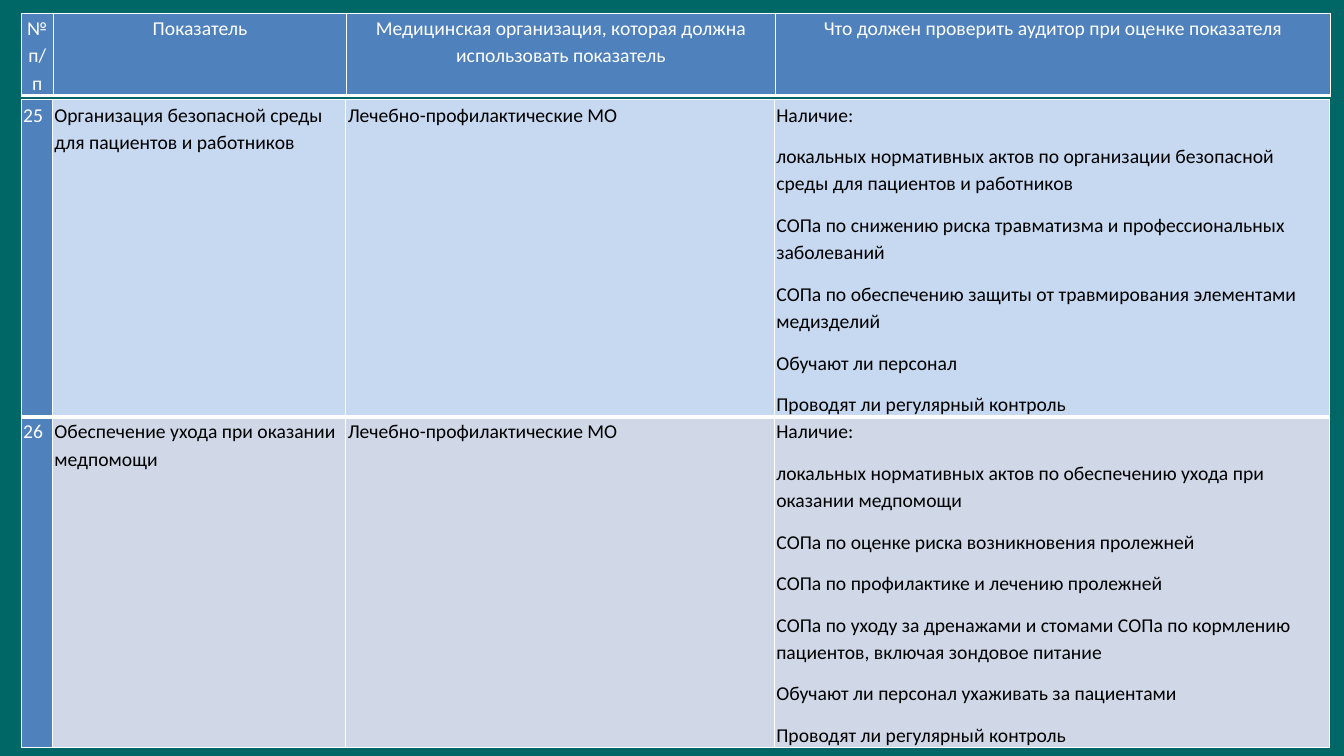
from dataclasses import dataclass

import pptx
import pptx.dml.color
import pptx.enum.text
import pptx.oxml
import pptx.oxml.ns
import pptx.util

PX = 9144  # EMU in one px, 100 px to the inch
WHITE, BLACK = "FFFFFF", "000000"
TEAL, BLUE, LIGHT_BLUE, PALE_BLUE = "006666", "4F81BD", "C6D9F1", "D0D8E8"
LEFT = pptx.enum.text.PP_ALIGN.LEFT
CENTER = pptx.enum.text.PP_ALIGN.CENTER


@dataclass
class Row:
    height: int
    cells: list[list[str]]  # paragraphs of each cell
    fill: str
    text_color: str = BLACK
    align: pptx.enum.text.PP_ALIGN = LEFT
    bottom_pt: int = 1


@dataclass
class Grid:
    top: int
    col_widths: list[int]
    side_margin: int
    rows: list[Row]


HEADER = Grid(13, [32, 291, 425, 551], 3, [
    Row(81, [
        ["№ п/п"],
        ["Показатель"],
        ["Медицинская организация, которая должна использовать показатель"],
        ["Что должен проверить аудитор при оценке показателя"],
    ], BLUE, WHITE, CENTER, 3),
])

INDICATORS = Grid(99, [31, 291, 425, 551], 2, [
    Row(312, [
        ["25"],
        ["Организация безопасной среды для пациентов и работников"],
        ["Лечебно-профилактические МО"],
        [
            "Наличие:",
            "локальных нормативных актов по организации безопасной среды для пациентов и работников",
            "СОПа по снижению риска травматизма и профессиональных заболеваний",
            "СОПа по обеспечению защиты от травмирования элементами медизделий",
            "Обучают ли персонал",
            "Проводят ли регулярный контроль",
        ],
    ], LIGHT_BLUE, bottom_pt=3),
    Row(324, [
        ["26"],
        ["Обеспечение ухода при оказании медпомощи"],
        ["Лечебно-профилактические МО"],
        [
            "Наличие:",
            "локальных нормативных актов по обеспечению ухода при оказании медпомощи",
            "СОПа по оценке риска возникновения пролежней",
            "СОПа по профилактике и лечению пролежней",
            "СОПа по уходу за дренажами и стомами СОПа по кормлению пациентов, включая зондовое питание",
            "Обучают ли персонал ухаживать за пациентами",
            "Проводят ли регулярный контроль",
        ],
    ], PALE_BLUE),
])


def px(n: int) -> pptx.util.Emu:
    return pptx.util.Emu(n * PX)


def paint(fill, color: str) -> None:
    fill.solid()
    fill.fore_color.rgb = pptx.dml.color.RGBColor.from_string(color)


def write(tf, paragraphs: list[str], *, color: str, align=LEFT,
          size: int = 14, font: str = "Calibri") -> None:
    for i, text in enumerate(paragraphs):
        p = tf.paragraphs[0] if i == 0 else tf.add_paragraph()
        p.alignment = align
        p.line_spacing = 1.15
        p.space_after = pptx.util.Pt(10)
        r = p.add_run()
        r.text = text
        r.font.size = pptx.util.Pt(size)
        r.font.name = font
        paint(r.font.fill, color)


def add_borders(cell, bottom_pt: int) -> None:
    tc_pr = cell._tc.get_or_add_tcPr()
    for i, (side, width) in enumerate(
            [("lnL", 1), ("lnR", 1), ("lnT", 1), ("lnB", bottom_pt)]):
        tc_pr.insert(i, pptx.oxml.parse_xml(
            f'<a:{side} {pptx.oxml.ns.nsdecls("a")} w="{pptx.util.Pt(width)}">'
            f'<a:solidFill><a:srgbClr val="{WHITE}"/></a:solidFill></a:{side}>'))


def draw_grid(s, grid: Grid) -> None:
    frame = s.shapes.add_table(
        len(grid.rows), len(grid.col_widths), px(21), px(grid.top),
        px(sum(grid.col_widths)), px(sum(row.height for row in grid.rows)))
    table = frame.table
    table.first_row = table.horz_banding = False
    for column, width in zip(table.columns, grid.col_widths):
        column.width = px(width)
    for r_index, row in enumerate(grid.rows):
        table.rows[r_index].height = px(row.height)
        for c_index, paragraphs in enumerate(row.cells):
            cell = table.cell(r_index, c_index)
            cell.margin_left = cell.margin_right = px(grid.side_margin)
            cell.margin_top = cell.margin_bottom = 0
            # The number column is always white on blue
            is_number = c_index == 0
            paint(cell.fill, BLUE if is_number else row.fill)
            write(cell.text_frame, paragraphs, align=row.align,
                  color=WHITE if is_number else row.text_color)
            add_borders(cell, row.bottom_pt)


def main() -> None:
    prs = pptx.Presentation()
    prs.slide_width, prs.slide_height = px(1333), px(750)
    s = prs.slides.add_slide(prs.slide_layouts[6])
    paint(s.background.fill, TEAL)

    # Header strip, then the indicator rows
    for grid in (HEADER, INDICATORS):
        draw_grid(s, grid)

    prs.save("out.pptx")


if __name__ == "__main__":
    main()
